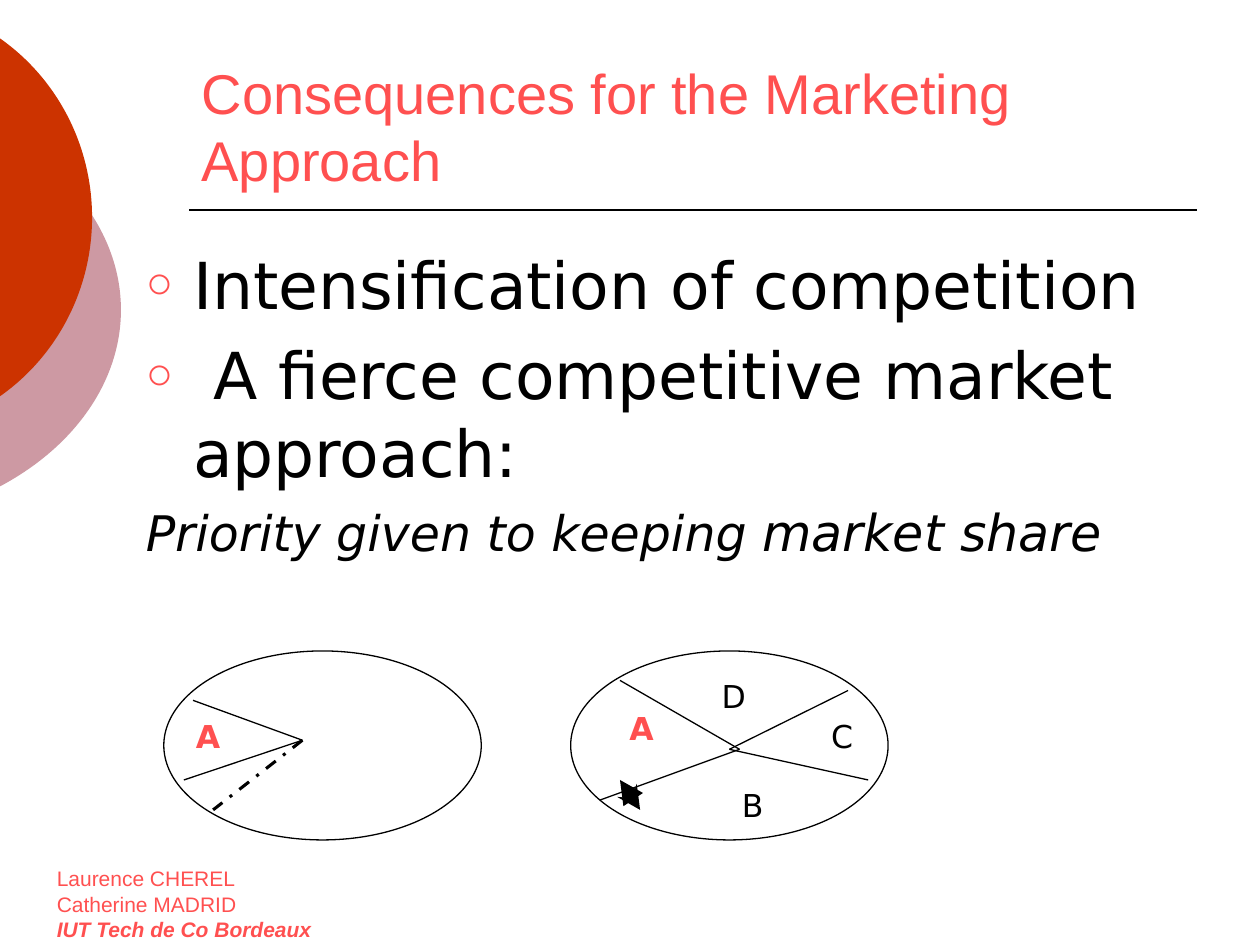
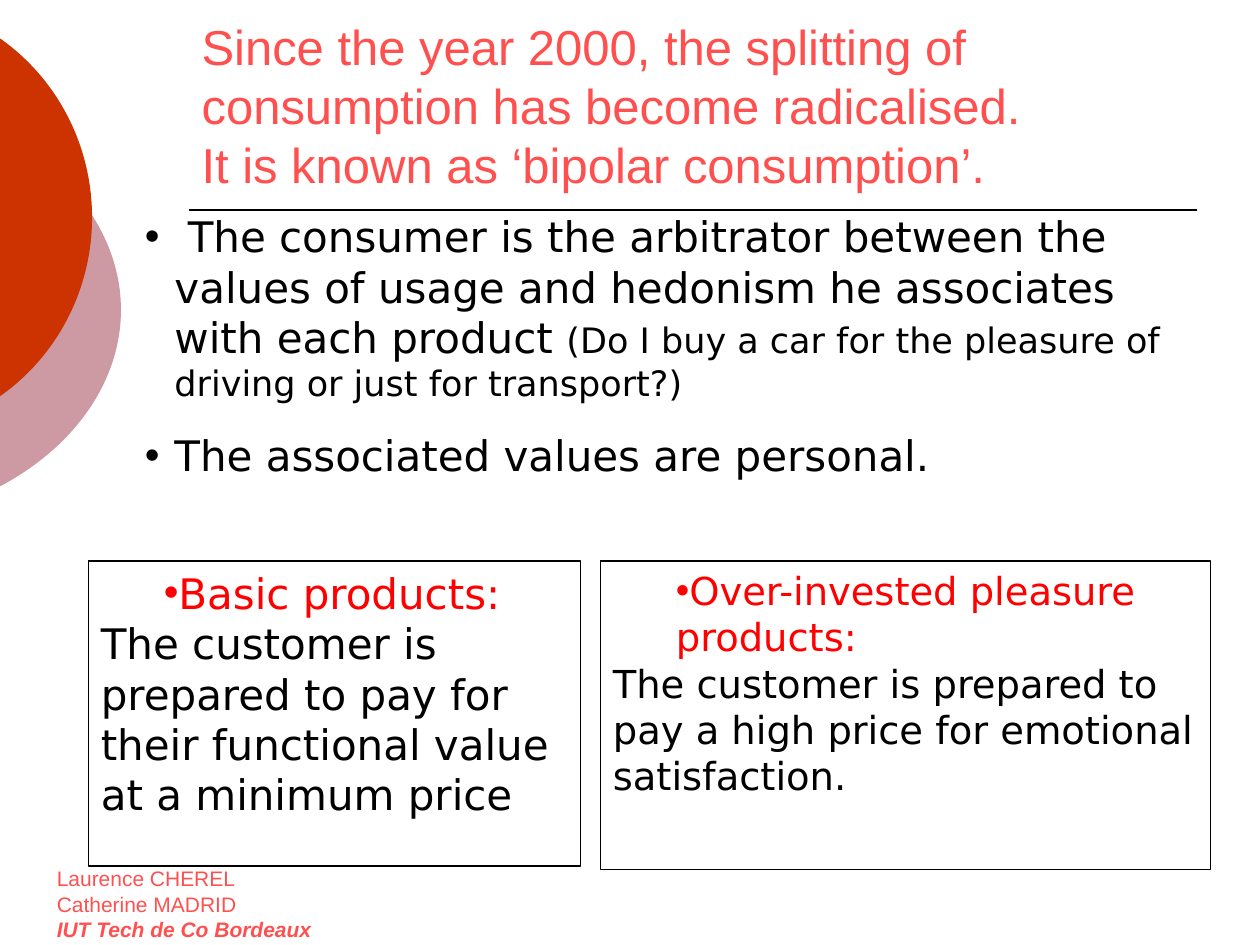
from lxml import etree
from pptx import Presentation
from pptx.dml.color import RGBColor
from pptx.enum.dml import MSO_LINE
from pptx.enum.shapes import MSO_CONNECTOR, MSO_SHAPE
from pptx.enum.text import MSO_ANCHOR, MSO_AUTO_SIZE, PP_ALIGN
from pptx.oxml.ns import qn
from pptx.util import Pt

LINE = MSO_CONNECTOR.STRAIGHT
DASH = MSO_LINE.DASH_DOT
OVAL, RECT = MSO_SHAPE.OVAL, MSO_SHAPE.RECTANGLE
TOP, BOTTOM = MSO_ANCHOR.TOP, MSO_ANCHOR.BOTTOM
LEFT = PP_ALIGN.LEFT
FIXED = MSO_AUTO_SIZE.NONE

HUES = {"rose": "CD99A3", "rust": "CC3300", "coral": "FF5050",
        "red": "FF0000", "black": "000000", "white": "FFFFFF"}
HEAD, BODY = "Arial", "DejaVu Sans"
TITLE = (108, 24, 576, 90)
FOOT = (25.4, 491.3, 232.5, 37.5)
RULE = (108, 120, 576)
DISCS = (("rose", (-254.9, 54, 324, 246.2)),
         ("rust", (-190.8, 0, 243.4, 248.4)))
NAMES = (("Laurence CHEREL", {}), ("Catherine MADRID", {}),
         ("IUT Tech de Co Bordeaux", {"bold": True, "italic": True}))


def hue(name):
    return RGBColor.from_string(HUES[name])


def pts(box):
    return [Pt(v) for v in box]


def apply(item, look):
    for key, value in look.items():
        setattr(item, key, value)


def node(owner, tag, **attrs):
    return etree.SubElement(owner, qn(tag), attrs)


def write(para, text, size, face=BODY, color="black", **look):
    run = para.add_run()
    run.text = text
    apply(run.font, {"name": face, "size": Pt(size), **look})
    run.font.color.rgb = hue(color)


def mark(para, char=None, left=0, hang=0, color=None, scale=None):
    props = para._p.get_or_add_pPr()
    props.set("marL", str(Pt(left)))
    props.set("indent", str(-Pt(hang)))
    if char is None:
        node(props, "a:buNone")
        return
    if color:
        node(node(props, "a:buClr"), "a:srgbClr", val=HUES[color])
    if scale:
        node(props, "a:buSzPct", val=str(scale * 1000))
    node(props, "a:buFont", typeface=HEAD)
    node(props, "a:buChar", char=char)


def lines(frame, count):
    while len(frame.paragraphs) < count:
        frame.add_paragraph()
    for para in frame.paragraphs:
        apply(para, {"alignment": LEFT, "space_before": Pt(0)})
    return frame.paragraphs


def place(shape, box, **look):
    apply(shape, dict(zip(("left", "top", "width", "height"), pts(box))))
    apply(shape.text_frame, {"word_wrap": True, "auto_size": FIXED, **look})
    return shape.text_frame


def note(slide, box, wrap=True):
    frame = slide.shapes.add_textbox(*pts(box)).text_frame
    frame.word_wrap = wrap
    return frame


def link(slide, start, end, width=0.75, dash=None, ends=()):
    bar = slide.shapes.add_connector(LINE, *pts(start + end))
    bar.line.color.rgb = hue("black")
    apply(bar.line, {"width": Pt(width), "dash_style": dash})
    for tag, kind in ends:
        node(bar.line._get_or_add_ln(), tag, type=kind)
    node(bar._element.spPr, "a:effectLst")


def panel(slide, kind, box, fill="white", edge="black"):
    shape = slide.shapes.add_shape(kind, *pts(box))
    shape.shadow.inherit = False
    shape.fill.solid()
    shape.fill.fore_color.rgb = hue(fill)
    if edge:
        shape.line.color.rgb = hue(edge)
        shape.line.width = Pt(0.75)
    else:
        shape.line.fill.background()
    return shape


def base(deck, title, size):
    slide = deck.slides.add_slide(deck.slide_layouts[1])
    for color, box in DISCS:
        panel(slide, OVAL, box, color, None)
    x, y, w = RULE
    link(slide, (x, y), (x + w, y), 1)
    paras = lines(note(slide, FOOT), len(NAMES))
    for para, (text, look) in zip(paras, NAMES):
        write(para, text, 12, HEAD, "coral", **look)
    frame = place(slide.shapes.title, TITLE, vertical_anchor=BOTTOM)
    para = lines(frame, 1)[0]
    for index, part in enumerate(title):
        if index:
            para.add_line_break()
        write(para, part, size, HEAD, "coral")
    return slide


def pie(slide, box, spokes, tags):
    x, y = box[:2]
    panel(slide, OVAL, box)
    for (ax, ay), (bx, by), look in spokes:
        link(slide, (x + ax, y + ay), (x + bx, y + by), **look)
    for text, dx, dy, look in tags:
        frame = note(slide, (x + dx, y + dy, 28.5, 29), False)
        write(frame.paragraphs[0], text, 18, **look)


def market(deck):
    slide = base(deck, ["Consequences for the Marketing Approach"], 32)
    frame = place(slide.placeholders[1], (76.1, 136, 643.9, 220),
                  vertical_anchor=TOP)
    first, second, third = lines(frame, 3)
    write(first, "Intensification of competition", 37)
    write(second, " A fierce competitive market approach:", 37)
    write(third, "Priority given to keeping ", 28, italic=True)
    write(third, "market share", 29, italic=True)
    second.space_before = Pt(7.4)
    third.space_before = Pt(5.8)
    for para in (first, second):
        mark(para, "○", 27, 27, "coral", 70)
    mark(third, None, 27, 27)

    own = {"color": "coral", "bold": True}
    hub, east, west = (79.2, 51), (96.5, 56.2), (90.7, 56.2)
    pie(slide, (93.6, 372, 181.4, 108),
        [((16.7, 28.2), hub, {}), (hub, (11.5, 73.7), {}),
         (hub, (28.2, 90.8), {"width": 1.75, "dash": DASH})],
        [("A", 11.2, 34, own)])
    arrow = {"width": 4.5, "ends": (("a:headEnd", "triangle"),
                                    ("a:tailEnd", "stealth"))}
    pie(slide, (326.1, 372, 181.4, 108),
        [((28.2, 16.8), east, {}), (east, (16.7, 85.2), {}),
         (west, (170, 73.7), {}), (west, (158.5, 22.6), {}),
         ((28.2, 73.7), (39.7, 90.8), arrow)],
        [("A", 26.5, 29.7, own), ("B", 90.7, 73.7, {}),
         ("D", 79.2, 11.2, {}), ("C", 141.7, 34, {})])


def card(slide, box, size, head, text):
    frame = place(panel(slide, RECT, box), box, vertical_anchor=TOP)
    top, rest = lines(frame, 2)
    write(top, head, size, color="red")
    mark(top, "•", 36, 0, "red")
    write(rest, text, size)


def split(deck):
    slide = base(deck, ["Since the year 2000, the splitting of consumption "
                        "has become radicalised.",
                        "It is known as ‘bipolar consumption’."], 28)
    frame = place(slide.placeholders[1], (75.6, 116.8, 622, 162.7),
                  vertical_anchor=TOP)
    first, second = lines(frame, 2)
    write(first, " The consumer is the arbitrator between the values of usage "
                 "and hedonism he associates with each product ", 24)
    write(first, "(Do I buy a car for the pleasure of driving or just for "
                 "transport?)", 20)
    write(second, "The associated values are personal.", 24)
    second.space_before = Pt(14.6)
    for para in (first, second):
        mark(para, "•", 16.9, 16.9)
    card(slide, (343.2, 320.6, 348.6, 176.3), 22,
         "Over-invested pleasure products:",
         "The customer is prepared to pay a high price for emotional "
         "satisfaction.")
    card(slide, (50.5, 320.6, 281.4, 174.3), 24, "Basic products:",
         "The customer is prepared to pay for their functional value at a "
         "minimum price")


def main():
    deck = Presentation()
    apply(deck, {"slide_width": Pt(720), "slide_height": Pt(540)})
    market(deck)
    split(deck)
    deck.save("out.pptx")


if __name__ == "__main__":
    main()
